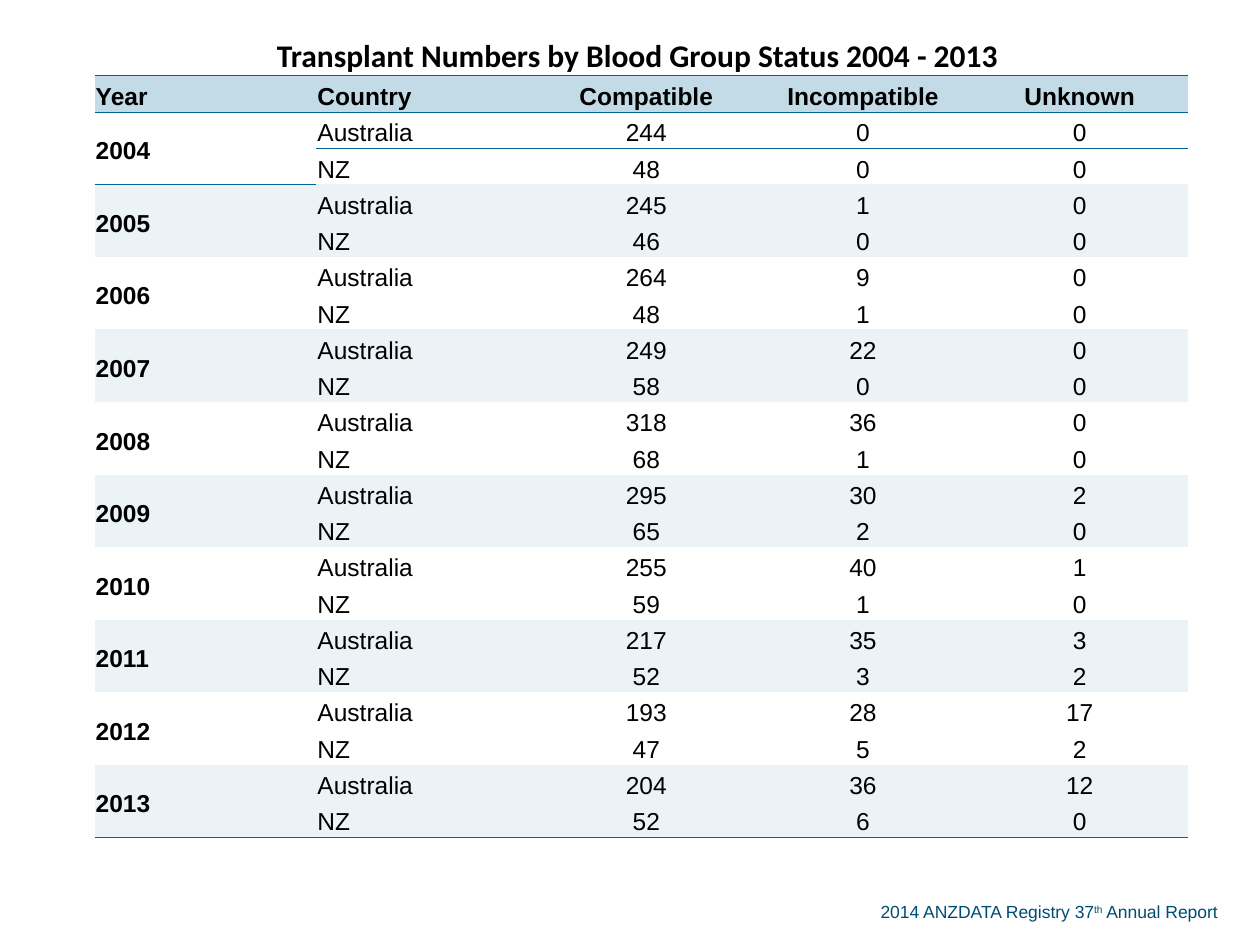
from typing import NamedTuple

import pptx
import pptx.dml.color
import pptx.enum.text
import pptx.oxml
import pptx.oxml.ns
import pptx.table
import pptx.text.text
import pptx.util

Inches = pptx.util.Inches
Pt = pptx.util.Pt
ALIGN = pptx.enum.text.PP_ALIGN

COLOURS = {
    "text": "000000",
    "rule": "006699",
    "header": "C2DBE7",
    "band": "EBF3F7",
    "footer": "004D73",
}
NO_GRID_STYLE = "{2D5ABB26-0587-4C30-8999-92F81FD0307C}"
TITLE = "Transplant Numbers by Blood Group Status 2004 - 2013 "
HEADINGS = ("Year", "Country", "Compatible", "Incompatible", "Unknown")
COLUMN_WIDTHS = (1.76, 1.76, 1.72, 1.72, 1.72)
TABLE_HEIGHT = 6.32
FIRST_DATA_ROW = 2


class YearCounts(NamedTuple):
    """Compatible, incompatible and unknown transplants of one year."""
    year: int
    australia: tuple[int, int, int]
    new_zealand: tuple[int, int, int]


YEARS = (
    YearCounts(2004, (244, 0, 0), (48, 0, 0)),
    YearCounts(2005, (245, 1, 0), (46, 0, 0)),
    YearCounts(2006, (264, 9, 0), (48, 1, 0)),
    YearCounts(2007, (249, 22, 0), (58, 0, 0)),
    YearCounts(2008, (318, 36, 0), (68, 1, 0)),
    YearCounts(2009, (295, 30, 2), (65, 2, 0)),
    YearCounts(2010, (255, 40, 1), (59, 1, 0)),
    YearCounts(2011, (217, 35, 3), (52, 3, 2)),
    YearCounts(2012, (193, 28, 17), (47, 5, 2)),
    YearCounts(2013, (204, 36, 12), (52, 6, 0)),
)


def rgb(name: str) -> pptx.dml.color.RGBColor:
    return pptx.dml.color.RGBColor.from_string(COLOURS[name])


def add_rules(cell: pptx.table._Cell, sides: str) -> None:
    """Draw thin rules on the sides given, T before B."""
    properties = cell._tc.get_or_add_tcPr()
    for side in sides:
        properties.append(pptx.oxml.parse_xml(
            f'<a:ln{side} {pptx.oxml.ns.nsdecls("a")} w="{Pt(0.5)}">'
            f'<a:solidFill><a:srgbClr val="{COLOURS["rule"]}"/></a:solidFill>'
            f'</a:ln{side}>'))


def style_cell(cell: pptx.table._Cell, fill: str | None, sides: str = "") -> None:
    cell.margin_left = cell.margin_right = cell.margin_top = Inches(0.01)
    cell.margin_bottom = 0
    cell.vertical_anchor = pptx.enum.text.MSO_ANCHOR.MIDDLE
    add_rules(cell, sides)
    if fill:
        cell.fill.solid()
        cell.fill.fore_color.rgb = rgb(fill)
    else:
        cell.fill.background()


def set_font(paragraph: pptx.text.text._Paragraph, name: str, size: int,
             colour: str, bold: bool = False) -> None:
    font = paragraph.font
    font.name, font.size, font.bold = name, Pt(size), bold
    font.color.rgb = rgb(colour)


def write_cell(cell: pptx.table._Cell, text: str, column: int, bold: bool) -> None:
    paragraph = cell.text_frame.paragraphs[0]
    paragraph.add_run().text = text
    paragraph.alignment = ALIGN.LEFT if column < 2 else ALIGN.CENTER
    paragraph.line_spacing = 1.19
    paragraph.space_after = Pt(14)
    set_font(paragraph, "Arial", 14, "text", bold)


def add_transplant_table(slide: pptx.slide.Slide) -> None:
    row_count = FIRST_DATA_ROW + 2 * len(YEARS)
    frame = slide.shapes.add_table(
        row_count, len(HEADINGS), Inches(0.75), Inches(0.29),
        Inches(sum(COLUMN_WIDTHS)), Inches(TABLE_HEIGHT))
    table = frame.table
    table.first_row = table.horz_banding = False
    frame.element.xpath(".//a:tableStyleId")[0].text = NO_GRID_STYLE
    for column, width in zip(table.columns, COLUMN_WIDTHS):
        column.width = Inches(width)
    for row in table.rows:
        row.height = Inches(TABLE_HEIGHT / row_count)

    # Title across all columns
    for column in range(len(HEADINGS)):
        style_cell(table.cell(0, column), None, "B")
    title_cell = table.cell(0, 0)
    title_cell.merge(table.cell(0, len(HEADINGS) - 1))
    paragraph = title_cell.text_frame.paragraphs[0]
    paragraph.add_run().text = TITLE
    paragraph.alignment = ALIGN.CENTER
    set_font(paragraph, "Calibri", 18, "text", bold=True)

    # Column headings
    for column, heading in enumerate(HEADINGS):
        cell = table.cell(1, column)
        style_cell(cell, "header", "TB")
        write_cell(cell, heading, column, bold=True)

    # Two rows a year, every second year shaded
    for index, counts in enumerate(YEARS):
        top = FIRST_DATA_ROW + 2 * index
        fill = "band" if index % 2 else None
        is_last = index == len(YEARS) - 1
        countries = (("Australia", counts.australia), ("NZ", counts.new_zealand))
        for offset, (country, numbers) in enumerate(countries):
            values = ("" if offset else counts.year, country, *numbers)
            for column, value in enumerate(values):
                cell = table.cell(top + offset, column)
                sides = "T" if index == 0 and offset == 0 else ""
                if is_last and (offset == 1 or column == 0):
                    sides += "B"
                style_cell(cell, fill, sides)
                if value != "":
                    write_cell(cell, str(value), column, bold=column == 0)
        table.cell(top, 0).merge(table.cell(top + 1, 0))


def add_footer(slide: pptx.slide.Slide) -> None:
    box = slide.shapes.add_textbox(
        Inches(6.89), Inches(7.1), Inches(2.99), Inches(0.27))
    box.text_frame.word_wrap = True
    paragraph = box.text_frame.paragraphs[0]
    set_font(paragraph, "Arial", 10, "footer")
    for text in ("2014 ANZDATA Registry 37", "th", " Annual Report"):
        run = paragraph.add_run()
        run.text = text
        if text == "th":
            run.font._element.set("baseline", "30000")


def main() -> None:
    presentation = pptx.Presentation()
    presentation.slide_width = Inches(10)
    presentation.slide_height = Inches(7.5)
    slide = presentation.slides.add_slide(presentation.slide_layouts[6])
    add_footer(slide)
    add_transplant_table(slide)
    presentation.save("out.pptx")


if __name__ == "__main__":
    main()
